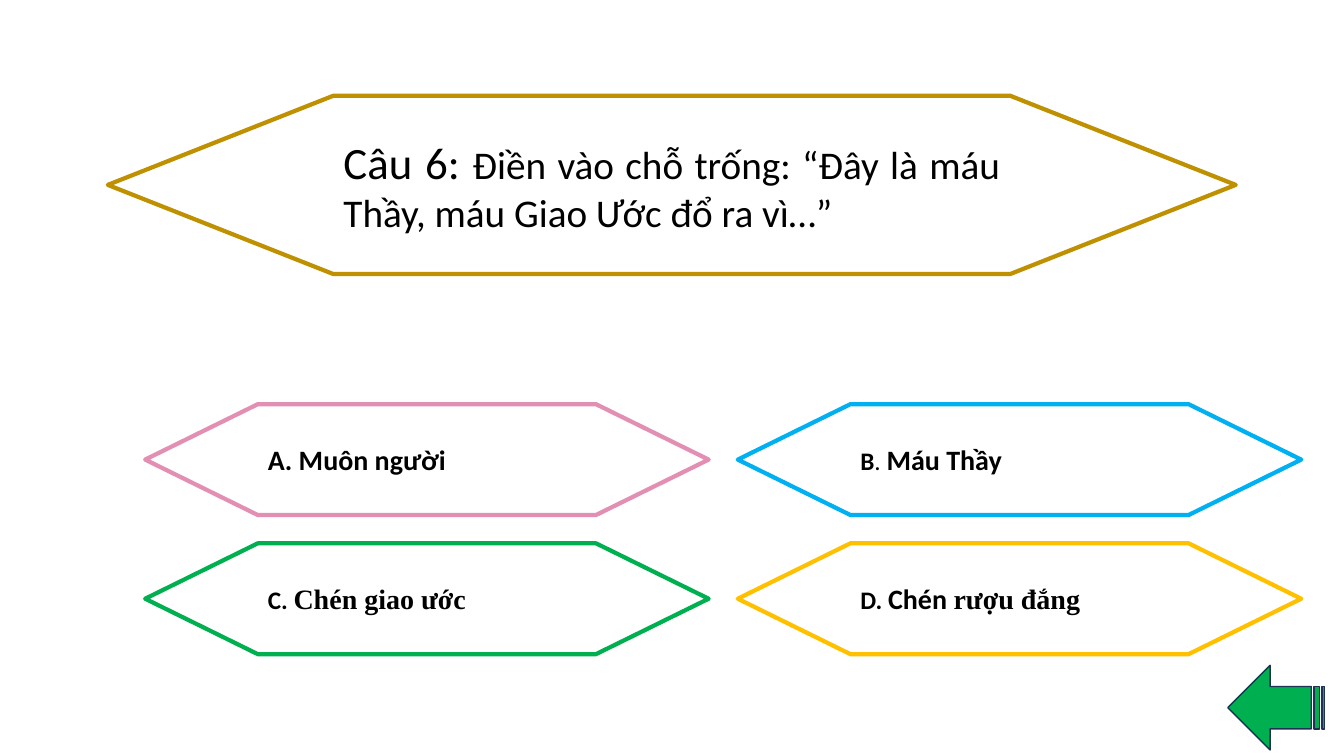
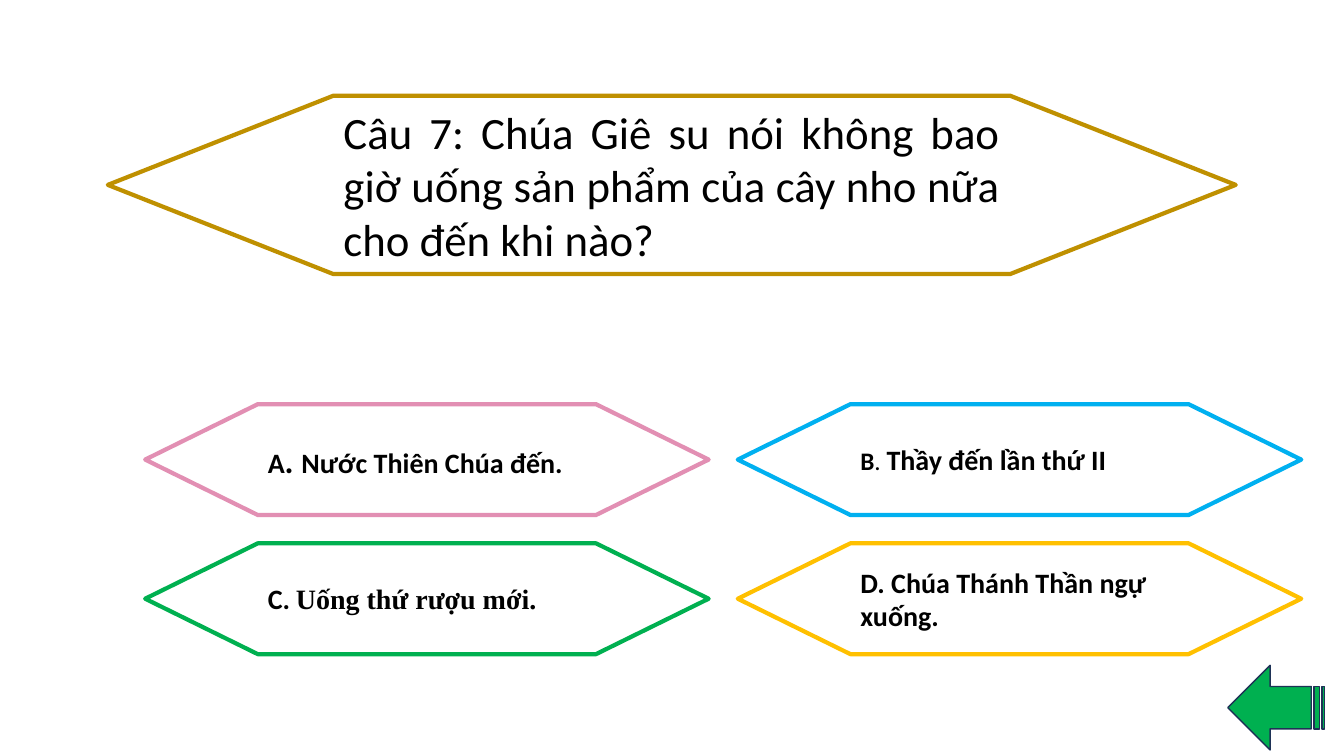
from pptx import Presentation
from pptx.dml.color import RGBColor
from pptx.enum.shapes import MSO_SHAPE
from pptx.enum.text import MSO_ANCHOR, MSO_AUTO_SIZE, PP_ALIGN
from pptx.util import Pt

HEX = MSO_SHAPE.FLOWCHART_PREPARATION
ARROW = MSO_SHAPE.STRIPED_RIGHT_ARROW
MIDDLE = MSO_ANCHOR.MIDDLE
FIXED = MSO_AUTO_SIZE.NONE
LEFT, JUSTIFY = PP_ALIGN.LEFT, PP_ALIGN.JUSTIFY

COLORS = {
    "text": "000000", "ask": "BF9000", "pink": "E28FB3", "blue": "00B0F0",
    "green": "00B050", "gold": "FFC000", "edge": "1E3256",
}
SANS, SERIF = "Calibri", "Times New Roman"

# Boxes: left, top, width, height in points
PAGE = (960, 540)
ASK = (77, 68.4, 805.7, 127.4)
GRID = (103.7, 288.7, 825.8, 178.6)
BACK = (877, 475.2, 69.1, 60.5)
GAP = (20.8, 20.2)
BORDERS = ("pink", "blue", "green", "gold")

FRAME = {
    "word_wrap": True, "auto_size": FIXED, "vertical_anchor": MIDDLE,
    "margin_left": Pt(7.2), "margin_right": Pt(7.2),
    "margin_top": Pt(3.6), "margin_bottom": Pt(3.6),
}

# Each run is text, size, bold, face; each answer is its alignment and runs
SLIDES = [
    {
        "ask": [("Câu 6: ", 32, False, SANS),
                ("Điền vào chỗ trống: “Đây là máu Thầy, máu Giao Ước đổ ra vì…”",
                 28, False, SANS)],
        "answers": [
            (JUSTIFY, [("A. Muôn người", 20, True, SANS)]),
            (JUSTIFY, [("B", 18, True, SANS), (". ", 18, False, SANS),
                       ("Máu Thầy", 20, True, SANS)]),
            (JUSTIFY, [("C. ", 18, True, SANS),
                       ("Chén giao ước", 20, True, SERIF)]),
            (LEFT, [("D. ", 18, True, SANS), ("Chén ", 20, True, SANS),
                    ("rượu đắng", 20, True, SERIF)]),
        ],
    },
    {
        "ask": [("Câu 7: Chúa Giê su nói không bao giờ uống sản phẩm "
                 "của cây nho nữa cho đến khi nào?", 32, False, SANS)],
        "answers": [
            (LEFT, [("A", 20, True, SANS), (". ", 24, True, SANS),
                    ("Nước Thiên Chúa đến.", 20, True, SANS)]),
            (JUSTIFY, [("B", 18, True, SANS), (". ", 18, False, SANS),
                       ("Thầy đến lần thứ II", 20, True, SANS)]),
            (JUSTIFY, [("C.", 20, True, SANS), (" ", 18, True, SANS),
                       ("Uống thứ rượu mới.", 20, True, SERIF)]),
            (LEFT, [("D. Chúa Thánh Thần ngự xuống.", 20, True, SANS)]),
        ],
    },
]


def color(name):
    return RGBColor.from_string(COLORS[name])


def assign(item, values):
    for key, value in values.items():
        setattr(item, key, value)


def write(shape, runs, align):
    frame = shape.text_frame
    assign(frame, FRAME)
    para = frame.paragraphs[0]
    para.alignment = align
    for text, size, bold, face in runs:
        run = para.add_run()
        run.text = text
        assign(run.font, {"size": Pt(size), "bold": bold, "name": face})
        run.font.color.rgb = color("text")


def draw(slide, kind, box, edge, width, fill=None):
    shape = slide.shapes.add_shape(kind, *map(Pt, box))
    shape.shadow.inherit = False
    if fill:
        shape.fill.solid()
        shape.fill.fore_color.rgb = color(fill)
    else:
        shape.fill.background()
    shape.line.color.rgb = color(edge)
    shape.line.width = Pt(width)
    return shape


def add_ask(slide, box, runs):
    draw(slide, HEX, box, "ask", 3)
    # The title fills the flat middle three fifths of the hexagon
    left, top, width, height = box
    title = slide.shapes.title
    assign(title, {"left": Pt(left + width / 5), "top": Pt(top),
                   "width": Pt(width * 3 / 5), "height": Pt(height)})
    write(title, runs, JUSTIFY)


def add_grid(slide, box, answers):
    left, top, width, height = box
    wide, high = (width - GAP[0]) / 2, (height - GAP[1]) / 2
    for i, (edge, (align, runs)) in enumerate(zip(BORDERS, answers)):
        row, col = divmod(i, 2)
        cell = (left + col * (wide + GAP[0]), top + row * (high + GAP[1]),
                wide, high)
        write(draw(slide, HEX, cell, edge, 3), runs, align)


def add_back(slide, box):
    draw(slide, ARROW, box, "edge", 1, "green").rotation = 180


def main():
    deck = Presentation()
    assign(deck, {"slide_width": Pt(PAGE[0]), "slide_height": Pt(PAGE[1])})
    for quiz in SLIDES:
        slide = deck.slides.add_slide(deck.slide_layouts[5])
        add_ask(slide, ASK, quiz["ask"])
        add_grid(slide, GRID, quiz["answers"])
        add_back(slide, BACK)
    deck.save("out.pptx")


if __name__ == "__main__":
    main()
